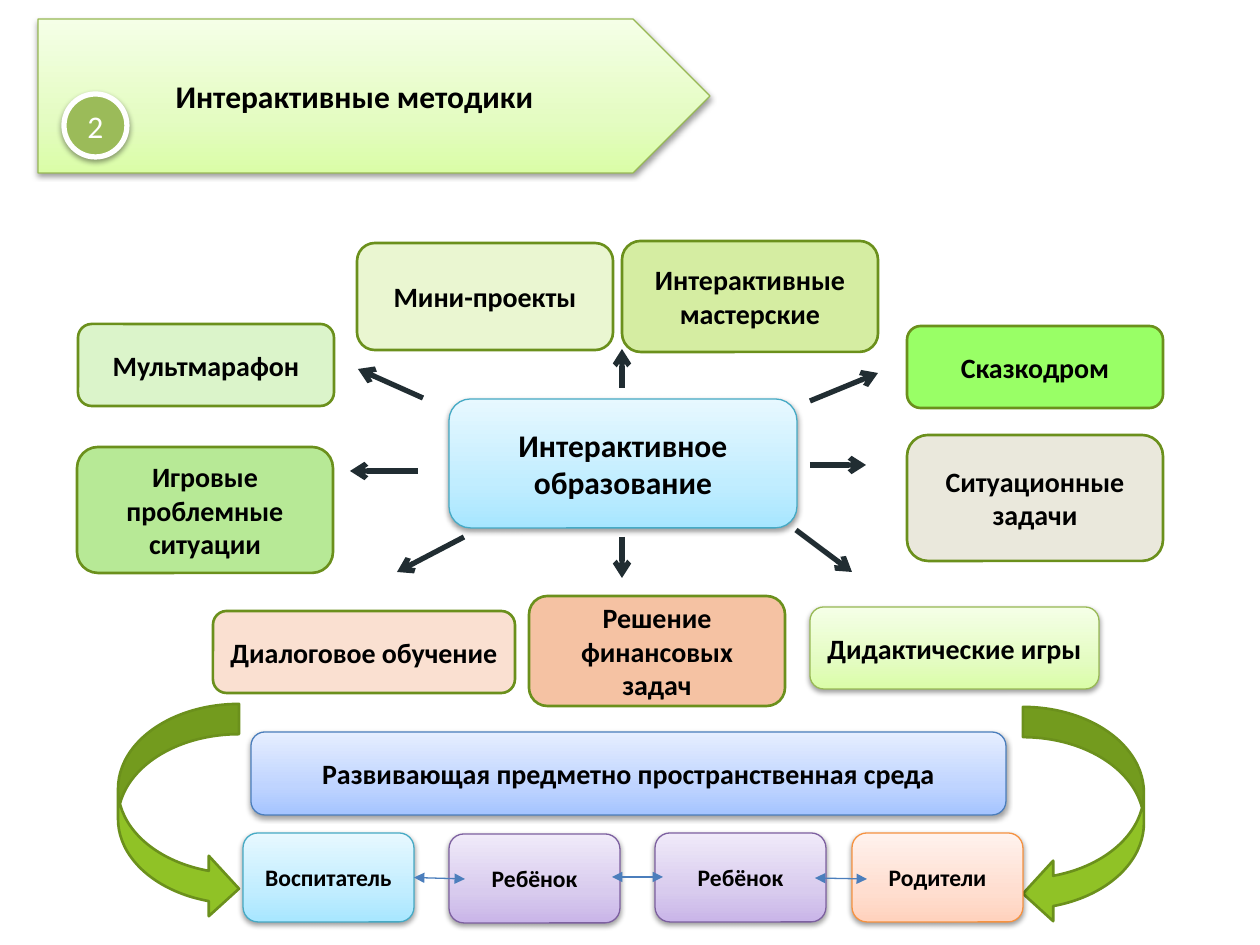
from copy import deepcopy

from lxml.etree import SubElement
from pptx import Presentation
from pptx.dml.color import RGBColor
from pptx.enum.shapes import MSO_CONNECTOR, MSO_SHAPE as SHAPE
from pptx.enum.text import MSO_ANCHOR, MSO_AUTO_SIZE, PP_ALIGN
from pptx.oxml.ns import qn
from pptx.util import Pt

PX = 914400 / 126
FONT = "Calibri"

BLACK = RGBColor(0x00, 0x00, 0x00)
WHITE = RGBColor(0xFF, 0xFF, 0xFF)
OLIVE = RGBColor(0x6B, 0x90, 0x1C)
LEAF = RGBColor(0x90, 0xC2, 0x26)
BADGE = RGBColor(0x9B, 0xBB, 0x59)
INK = RGBColor(0x21, 0x2D, 0x32)
STEEL = RGBColor(0x4B, 0x7E, 0xBC)
MINT = RGBColor(0xDB, 0xF4, 0xCA)
PEACH = RGBColor(0xFA, 0xE0, 0xD1)
CREAM = RGBColor(0xEA, 0xF6, 0xD1)
SALMON = RGBColor(0xF5, 0xC2, 0xA3)
LIME = RGBColor(0xD5, 0xED, 0xA2)
GRASS = RGBColor(0xB7, 0xE9, 0x96)
SAND = RGBColor(0xEA, 0xE8, 0xDC)
NEON = RGBColor(0x99, 0xFF, 0x66)

# Gradient themes: outline, then the colours from bottom to top
AQUA = (RGBColor(0x46, 0xAA, 0xC5), RGBColor(0xA7, 0xE6, 0xFF),
        RGBColor(0xC1, 0xED, 0xFF), RGBColor(0xE7, 0xF8, 0xFF))
GREEN = (RGBColor(0x98, 0xB9, 0x55), RGBColor(0xDA, 0xFD, 0xA7),
         RGBColor(0xE4, 0xFC, 0xC2), RGBColor(0xF5, 0xFF, 0xE7))
PURPLE = (RGBColor(0x7D, 0x60, 0xA0), RGBColor(0xC9, 0xB5, 0xE8),
          RGBColor(0xD8, 0xCB, 0xEE), RGBColor(0xF0, 0xEA, 0xF9))
BLUE = (STEEL, RGBColor(0xA4, 0xC4, 0xFF),
        RGBColor(0xBF, 0xD4, 0xFF), RGBColor(0xE6, 0xEE, 0xFF))
ORANGE = (RGBColor(0xF6, 0x92, 0x40), RGBColor(0xFF, 0xD2, 0xBD),
          RGBColor(0xFF, 0xDE, 0xD0), RGBColor(0xFF, 0xF2, 0xED))

# Method cards: text, box in px, fill
METHODS = [
    ("Мультмарафон", (78, 324, 256, 82), MINT),
    ("Диалоговое обучение", (213, 611, 302, 82), PEACH),
    ("Мини-проекты", (357, 243, 256, 107), CREAM),
    ("Решение финансовых задач", (529, 596, 256, 110), SALMON),
    ("Интерактивные мастерские", (622, 241, 256, 111), LIME),
    ("Игровые проблемные ситуации", (77, 447, 256, 126), GRASS),
    ("Ситуационные задачи", (907, 435, 256, 126), SAND),
    ("Сказкодром", (907, 326, 256, 82), NEON),
]
# Arrows from the centre: start x, y, end x, y
RAYS = [
    (423, 398, 358, 369), (418, 471, 350, 471), (796, 530, 852, 572),
    (464, 537, 397, 572), (622, 537, 622, 578), (810, 465, 866, 465),
    (810, 401, 878, 373), (622, 388, 622, 349),
]
PARTICIPANTS = [
    ("Воспитатель", 243, 833, AQUA), ("Ребёнок", 449, 834, PURPLE),
    ("Ребёнок", 655, 833, PURPLE), ("Родители", 852, 833, ORANGE),
]
LINKS = [(414, 879, 465, 879), (612, 877, 663, 877), (815, 878, 867, 879)]


def px(*values):
    return [round(value * PX) for value in values]


def set_attributes(target, values):
    for name, value in values.items():
        setattr(target, name, value)


def write(shape, text, size, color=BLACK, bold=True):
    frame = shape.text_frame
    set_attributes(frame, {"word_wrap": True, "auto_size": MSO_AUTO_SIZE.NONE,
                           "vertical_anchor": MSO_ANCHOR.MIDDLE})
    paragraph = frame.paragraphs[0]
    paragraph.text = text
    paragraph.alignment = PP_ALIGN.CENTER
    set_attributes(paragraph.font, {"name": FONT, "size": Pt(size), "bold": bold})
    paragraph.font.color.rgb = color


def add_shape(slide, kind, box, fill, line_color, line_width):
    """Add a shape; fill is one colour or a sequence of gradient colours."""
    shape = slide.shapes.add_shape(kind, *px(*box))
    shape.shadow.inherit = False
    if isinstance(fill, RGBColor):
        shape.fill.solid()
        shape.fill.fore_color.rgb = fill
    else:
        fill_gradient(shape, fill)
    shape.line.color.rgb = line_color
    shape.line.width = Pt(line_width)
    return shape


def fill_gradient(shape, colors):
    shape.fill.gradient()
    shape.fill.gradient_angle = 90
    first = shape._element.spPr.find(".//" + qn("a:gs"))
    first.addnext(deepcopy(first))
    for stop, position, color in zip(shape.fill.gradient_stops, (0, 0.35, 1), colors):
        stop.position = position
        stop.color.rgb = color


def add_shadow(shape):
    effects = shape._element.spPr.find(qn("a:effectLst"))
    shadow = SubElement(effects, qn("a:outerShdw"), blurRad="40000", dist="20000",
                        dir="5400000", rotWithShape="0")
    color = SubElement(shadow, qn("a:srgbClr"), val="000000")
    SubElement(color, qn("a:alpha"), val="38000")


def add_glossy(slide, kind, box, theme):
    shape = add_shape(slide, kind, box, theme[1:], theme[0], 0.75)
    add_shadow(shape)
    return shape


def add_glossy_card(slide, text, box, theme, size):
    shape = add_glossy(slide, SHAPE.ROUNDED_RECTANGLE, box, theme)
    write(shape, text, size)
    return shape


def add_arrow(slide, ends, color, width, **heads):
    connector = slide.shapes.add_connector(MSO_CONNECTOR.STRAIGHT, *px(*ends))
    connector.line.color.rgb = color
    connector.line.width = Pt(width)
    line = connector.line._get_or_add_ln()
    for end, kind in heads.items():
        SubElement(line, qn("a:" + end), type=kind)
    SubElement(connector._element.spPr, qn("a:effectLst"))
    return connector


def add_curved_arrow(slide, box, flipped=False):
    shape = add_shape(slide, SHAPE.CURVED_RIGHT_ARROW, box, LEAF, OLIVE, 1.5)
    if flipped:
        shape._element.spPr.find(qn("a:xfrm")).set("flipH", "1")


def add_header(slide):
    add_glossy(slide, SHAPE.PENTAGON, (38, 19, 672, 154), GREEN)
    title = slide.shapes.title
    slide.shapes._spTree.append(title._element)
    left, top, width, height = px(38, 19, 633, 154)
    set_attributes(title, {"left": left, "top": top, "width": width, "height": height})
    write(title, "Интерактивные методики", 18)
    badge = add_shape(slide, SHAPE.FLOWCHART_CONNECTOR, (64, 94, 63, 63), BADGE, WHITE, 3)
    add_shadow(badge)
    write(badge, "2", 18, WHITE, bold=False)


def add_methods(slide):
    add_glossy_card(slide, "Интерактивное образование", (449, 399, 348, 129), AQUA, 18)
    for text, box, fill in METHODS:
        write(add_shape(slide, SHAPE.ROUNDED_RECTANGLE, box, fill, OLIVE, 1.5), text, 16)
    add_glossy_card(slide, "Дидактические игры", (810, 607, 289, 82), GREEN, 16)
    for ends in RAYS:
        add_arrow(slide, ends, INK, 3, tailEnd="arrow")


def add_environment(slide):
    add_glossy_card(slide, "Развивающая предметно пространственная среда",
                    (251, 732, 755, 83), BLUE, 16)
    add_curved_arrow(slide, (118, 704, 121, 215))
    add_curved_arrow(slide, (1023, 707, 121, 217), flipped=True)
    cards = [add_glossy_card(slide, text, (left, top, 171, 89), theme, 13.5)
             for text, left, top, theme in PARTICIPANTS]
    links = [add_arrow(slide, ends, STEEL, 0.75, headEnd="triangle", tailEnd="triangle")
             for ends in LINKS]
    links[0].begin_connect(cards[0], 3)


def main():
    presentation = Presentation()
    presentation.slide_width, presentation.slide_height = px(1260, 945)
    slide = presentation.slides.add_slide(presentation.slide_layouts[5])
    add_methods(slide)
    add_environment(slide)
    add_header(slide)
    presentation.save("out.pptx")


if __name__ == "__main__":
    main()
